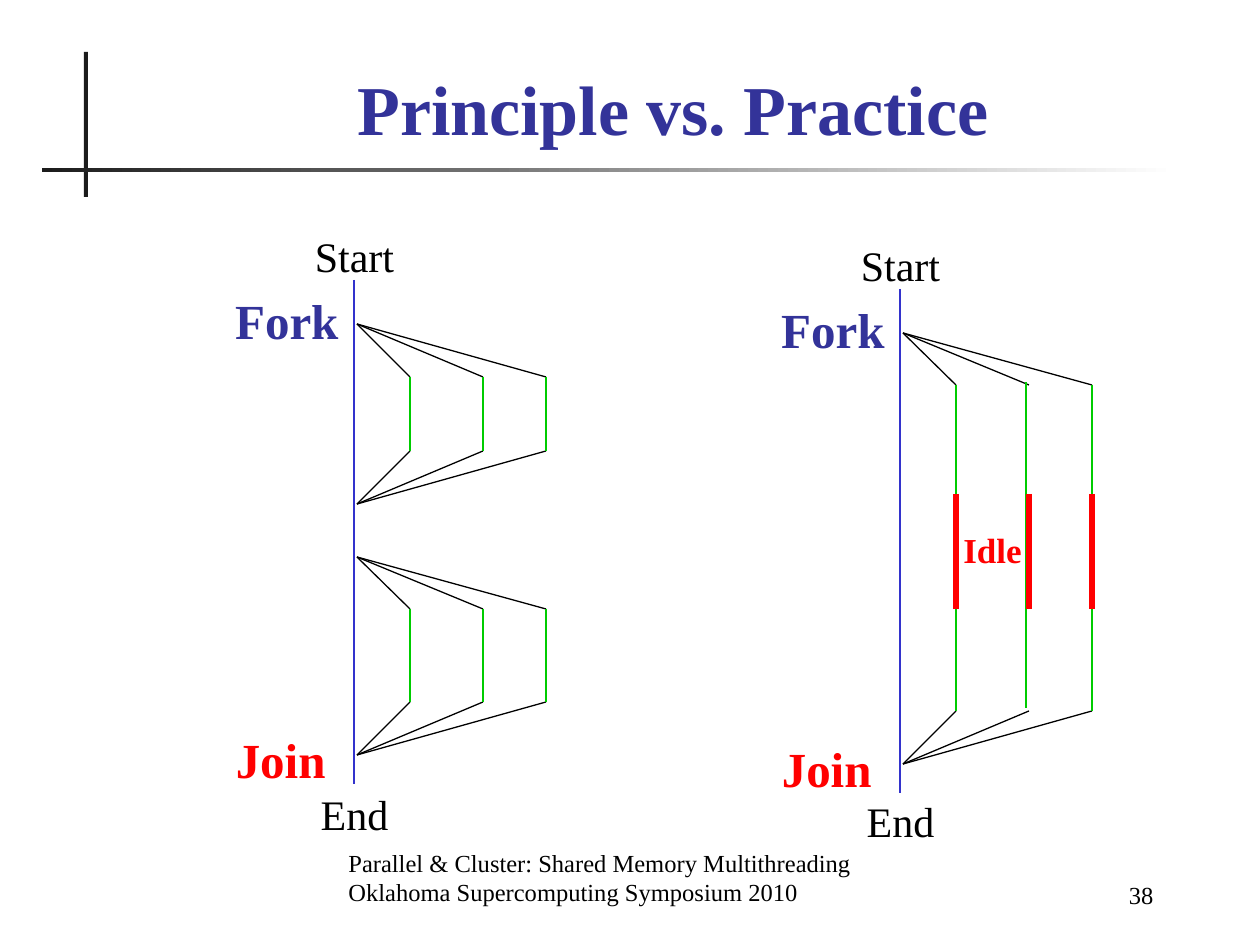
from dataclasses import dataclass

from lxml import etree
from pptx import Presentation
from pptx import util as u
from pptx.dml.color import RGBColor
from pptx.enum import shapes, text
from pptx.oxml.ns import qn

PX_PER_INCH = 126
LEFT, CENTER, RIGHT = text.PP_ALIGN.LEFT, text.PP_ALIGN.CENTER, text.PP_ALIGN.RIGHT
TOP, BOTTOM = text.MSO_ANCHOR.TOP, text.MSO_ANCHOR.BOTTOM


def px(length):
    return u.Inches(length / PX_PER_INCH)


@dataclass(frozen=True)
class Theme:
    font: str = "Times New Roman"
    ink: str = "000000"
    paper: str = "FFFFFF"
    rule: str = "1C1C1C"
    accent: str = "333399"
    master: str = "3333CC"
    worker: str = "00CC00"
    alert: str = "FF0000"
    title: int = 40
    phase: int = 28
    label: int = 24
    idle: int = 20
    footer: int = 14
    thin: float = 0.75
    thick: float = 3


class SlideBuilder:
    def __init__(self, page, theme):
        self.page = page
        self.theme = theme

    def set_text(self, box, lines, size, color, bold, align, anchor, wrap):
        frame = box.text_frame
        frame.word_wrap = wrap
        frame.auto_size = text.MSO_AUTO_SIZE.NONE
        frame.vertical_anchor = anchor
        for index, line in enumerate(lines):
            para = frame.add_paragraph() if index else frame.paragraphs[0]
            para.alignment = align
            span = para.add_run()
            span.text = line
            span.font.name = self.theme.font
            span.font.size = u.Pt(size)
            span.font.bold = bold
            span.font.color.rgb = RGBColor.from_string(color)

    def title(self, words, x, y, width, height):
        box = self.page.shapes.title
        box.left, box.top, box.width, box.height = map(px, (x, y, width, height))
        self.set_text(box, [words], self.theme.title, self.theme.accent, True,
                      CENTER, BOTTOM, True)

    def label(self, lines, x, y, width, height, size, color, bold=False,
              align=CENTER, anchor=TOP, wrap=False):
        box = self.page.shapes.add_textbox(*map(px, (x, y, width, height)))
        self.set_text(box, lines, size, color, bold, align, anchor, wrap)

    def bar(self, x, y, width, height, fade_to=None):
        bar = self.page.shapes.add_shape(
            shapes.MSO_SHAPE.RECTANGLE, *map(px, (x, y, width, height)))
        bar.shadow.inherit = False
        bar.line.fill.background()
        if fade_to:
            bar.fill.gradient()
            bar.fill.gradient_angle = 0
            colors = (self.theme.rule, fade_to)
            for position, (stop, color) in enumerate(zip(bar.fill.gradient_stops, colors)):
                stop.position = position
                stop.color.rgb = RGBColor.from_string(color)
        else:
            bar.fill.solid()
            bar.fill.fore_color.rgb = RGBColor.from_string(self.theme.rule)

    def line(self, x1, y1, x2, y2, color, weight=None):
        line = self.page.shapes.add_connector(
            shapes.MSO_CONNECTOR.STRAIGHT, *map(px, (x1, y1, x2, y2)))
        line.line.color.rgb = RGBColor.from_string(color)
        line.line.width = u.Pt(weight or self.theme.thin)
        etree.SubElement(line._element.spPr, qn("a:effectLst"))

    def fork_join(self, hub_x, fork_y, top, bottom, join_y, threads):
        """The fan out to the worker threads and the fan back in."""
        for x in threads:
            self.line(hub_x, fork_y, x, top, self.theme.ink)
            self.line(hub_x, join_y, x, bottom, self.theme.ink)

    def worker(self, x, top, bottom):
        self.line(x, top, x, bottom, self.theme.worker)

    def timeline(self, x, y, end_y):
        """The master thread with its phase and end labels."""
        theme = self.theme
        self.line(x, y, x, y + 504, theme.master)
        self.label(["Fork"], x - 132, y + 4, 129, 72, theme.phase, theme.accent, True, RIGHT)
        self.label(["Join"], x - 131, y + 443, 115, 72, theme.phase, theme.alert, True, RIGHT)
        self.label(["Start"], x - 52, y - 56, 105, 63, theme.label, theme.ink)
        self.label(["End"], x - 46, end_y, 93, 63, theme.label, theme.ink)


def main():
    deck = Presentation()
    deck.slide_width, deck.slide_height = u.Inches(10), u.Inches(7.5)
    theme = Theme()
    slide = SlideBuilder(deck.slides.add_slide(deck.slide_layouts[5]), theme)

    # Header rules and title
    slide.bar(84, 52, 4, 145)
    slide.bar(42, 168, 1134, 4, fade_to=theme.paper)
    slide.title("Principle vs. Practice", 136, 63, 1074, 93)

    # Footer
    slide.label(["Parallel & Cluster: Shared Memory Multithreading",
                 "Oklahoma Supercomputing Symposium 2010"],
                336, 850, 551, 63, theme.footer, theme.ink,
                align=LEFT, anchor=BOTTOM, wrap=True)
    slide.label(["38"], 987, 853, 179, 63, theme.footer, theme.ink,
                align=RIGHT, anchor=BOTTOM, wrap=True)

    thread_offsets = (56, 129, 192)

    # Principle: two separate parallel regions
    principle_x = 354
    threads = [principle_x + offset for offset in thread_offsets]
    slide.timeline(principle_x, 280, 782)
    for fork_y, top, bottom, join_y in ((324, 377, 451, 504), (557, 609, 702, 755)):
        slide.fork_join(principle_x + 3, fork_y, top, bottom, join_y, threads)
        for x in threads:
            slide.worker(x, top, bottom)

    # Practice: one long region, the middle worker slightly shifted
    practice_x = 900
    threads = [practice_x + offset for offset in thread_offsets]
    slide.timeline(practice_x, 289, 789)
    slide.fork_join(practice_x + 3, 333, 385, 711, 764, threads)
    for x, shift in zip(threads, (0, -3, 0)):
        slide.worker(x + shift, 385 + shift, 711 + shift)

    # Idle stretch of the workers
    for x in threads:
        slide.line(x, 494, x, 609, theme.alert, theme.thick)
    slide.label(["Idle"], 951, 522, 83, 54, theme.idle, theme.alert, True)

    deck.save("out.pptx")


if __name__ == "__main__":
    main()
